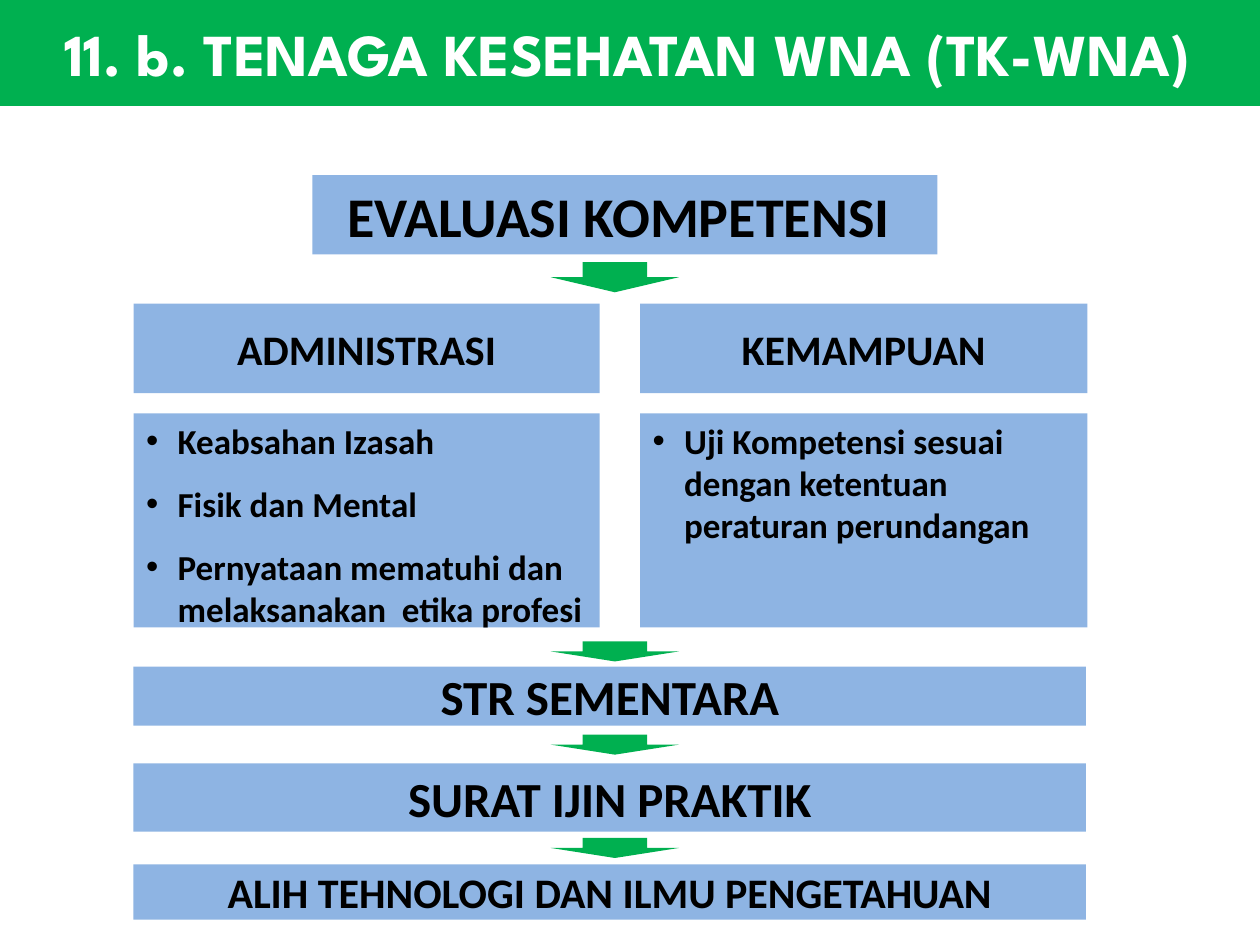
from pptx import Presentation
from pptx import util as u
from pptx.dml.color import RGBColor
from pptx.enum import shapes, text

BLUE, GREEN, BLACK, WHITE = "8EB4E3", "00B050", "000000", "FFFFFF"
LEFT, WIDTH = 1.06, 7.56
ARROW_LEFT, ARROW_WIDTH = 4.37, 1.02


def paint(shape, color):
    shape.fill.solid()
    shape.fill.fore_color.rgb = RGBColor.from_string(color)
    shape.line.fill.background()


def move(shape, left, top, width, height):
    shape.left, shape.top = u.Inches(left), u.Inches(top)
    shape.width, shape.height = u.Inches(width), u.Inches(height)


def write(shape, *lines, size, font="Calibri", color=BLACK, before=0, after=0,
          align=text.PP_ALIGN.CENTER, anchor=text.MSO_ANCHOR.MIDDLE, indent=None):
    frame = shape.text_frame
    frame.word_wrap = True
    frame.auto_size = text.MSO_AUTO_SIZE.NONE
    frame.vertical_anchor = anchor
    for number, line in enumerate(lines):
        paragraph = frame.add_paragraph() if number else frame.paragraphs[0]
        paragraph.alignment = align
        paragraph.space_before, paragraph.space_after = u.Pt(before), u.Pt(after)
        if indent is not None:  # hanging indent for the bullet
            properties = paragraph._p.get_or_add_pPr()
            properties.set("marL", str(u.Inches(indent)))
            properties.set("indent", str(-u.Inches(indent)))
        run = paragraph.add_run()
        run.text = line
        run.font.size, run.font.name, run.font.bold = u.Pt(size), font, True
        run.font.color.rgb = RGBColor.from_string(color)


def add_block(slide, kind, color, *box):
    shape = slide.shapes.add_shape(kind, *(u.Inches(length) for length in box))
    shape.shadow.inherit = False
    paint(shape, color)
    return shape


def fill_placeholder(shape, box, background, *lines, **style):
    move(shape, *box)
    paint(shape, background)
    write(shape, *lines, **style)


def main():
    presentation = Presentation()
    presentation.slide_width, presentation.slide_height = u.Inches(10), u.Inches(7.5)
    slide = presentation.slides.add_slide(
        presentation.slide_layouts.get_by_name("Comparison"))
    rectangle = shapes.MSO_SHAPE.RECTANGLE

    # Title bar
    fill_placeholder(slide.shapes.title, (-0.04, 0, 10.04, 0.84), GREEN,
                     "11. b. TENAGA KESEHATAN WNA (TK-WNA)",
                     size=34, font="League Spartan", color=WHITE)

    # Starting step
    start = add_block(slide, rectangle, BLUE, 2.48, 1.39, 4.96, 0.63)
    write(start, "EVALUASI KOMPETENSI ", size=32, before=6.4,
          anchor=text.MSO_ANCHOR.TOP)

    # Two columns, each a heading over a list
    columns = [
        (LEFT, 3.7, 6, "ADMINISTRASI",
         ["Keabsahan Izasah", "Fisik dan Mental",
          "Pernyataan mematuhi dan melaksanakan  etika profesi"]),
        (5.08, 3.55, 12, "KEMAMPUAN",
         ["Uji Kompetensi sesuai dengan ketentuan peraturan perundangan"]),
    ]
    bodies = iter(list(slide.placeholders)[1:])
    for left, width, before, heading, items in columns:
        fill_placeholder(next(bodies), (left, 2.41, width, 0.71), BLUE,
                         heading, size=24)
        fill_placeholder(next(bodies), (left, 3.28, width, 1.7), BLUE, *items,
                         size=20, before=before, after=6, indent=0.25,
                         align=text.PP_ALIGN.LEFT, anchor=text.MSO_ANCHOR.TOP)

    # Closing steps
    for top, height, size, label in [
        (5.29, 0.47, 28, "STR SEMENTARA"),
        (6.06, 0.54, 28, "SURAT IJIN PRAKTIK"),
        (6.86, 0.44, 24, "ALIH TEHNOLOGI DAN ILMU PENGETAHUAN"),
    ]:
        step = add_block(slide, rectangle, BLUE, LEFT, top, WIDTH, height)
        write(step, label, size=size)

    # Arrows between the steps
    for top, height in [(2.08, 0.24), (5.09, 0.16), (5.83, 0.16), (6.65, 0.16)]:
        add_block(slide, shapes.MSO_SHAPE.DOWN_ARROW, GREEN,
                  ARROW_LEFT, top, ARROW_WIDTH, height)

    presentation.save("out.pptx")


if __name__ == "__main__":
    main()
